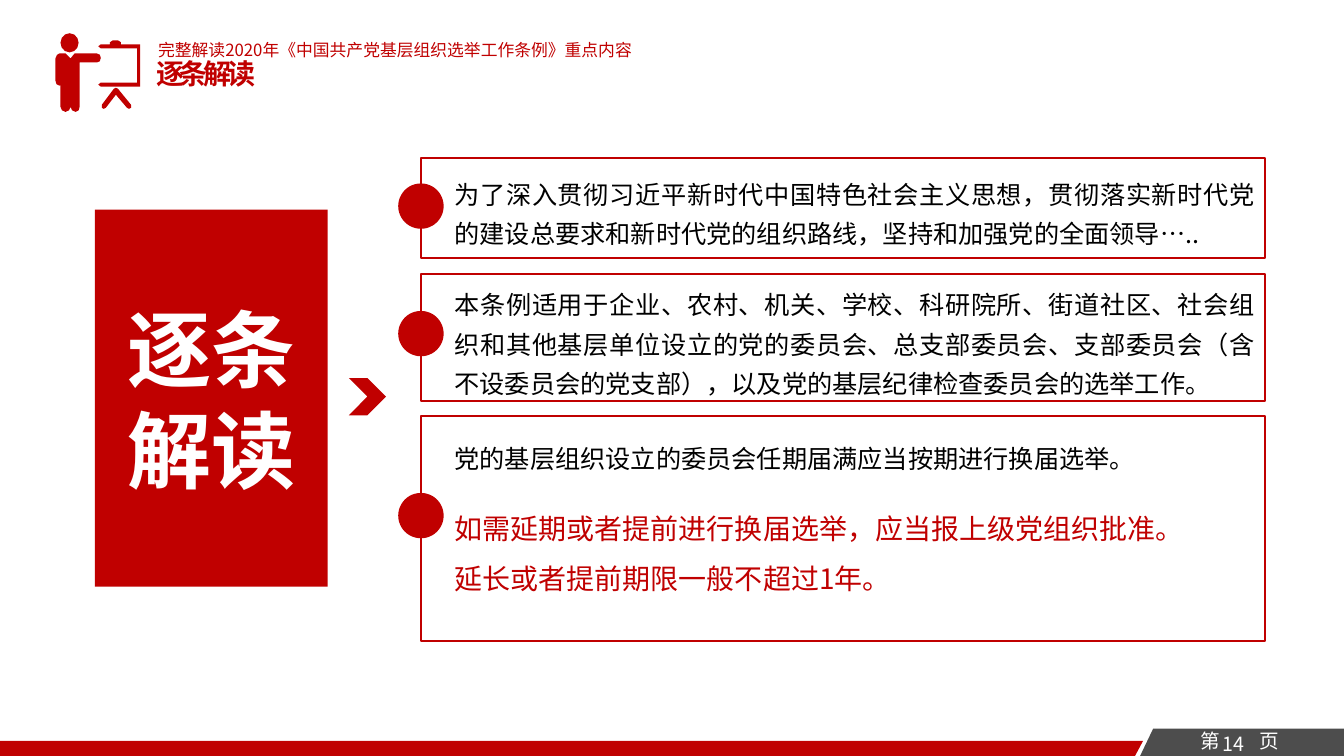
import lxml.etree
import pptx
import pptx.dml.color
import pptx.enum.shapes
import pptx.enum.text
import pptx.oxml.ns
import pptx.util

ALIGN = pptx.enum.text.PP_ALIGN
ANCHOR = pptx.enum.text.MSO_ANCHOR
SHAPE = pptx.enum.shapes.MSO_SHAPE
THEME = {
    "font": "Noto Sans CJK SC",
    "red": "C00000", "grey": "4D4D4D", "black": "000000", "white": "FFFFFF",
    "small": 12, "page": 14, "body": 18, "title": 20, "panel": 60,
    "frame": 1.5,
}

prs = pptx.Presentation()
prs.slide_width = pptx.util.Inches(13.333)
prs.slide_height = pptx.util.Inches(7.5)
s = prs.slides.add_slide(prs.slide_layouts[6])

# Lengths are hundredths of the slide's width and height: x, y, width, height.
COL, ROW = prs.slide_width / 100, prs.slide_height / 100
GRID = (COL, ROW, COL, ROW)


def paint(sp, fill=None, line=None):
    sp.shadow.inherit = False
    for part, color in ((sp.fill, fill), (sp.line.fill, line)):
        if color:
            part.solid()
            part.fore_color.rgb = pptx.dml.color.RGBColor.from_string(THEME[color])
        else:
            part.background()
    if line:
        sp.line.width = pptx.util.Pt(THEME["frame"])
    return sp


def write(text, at=None, sp=None, size="body", color="black", bold=False,
          align=ALIGN.LEFT, anchor=ANCHOR.TOP, leading=1.0, spacing=0, inset=True):
    """Put text into the shape sp, or into a new text box placed at `at`."""
    if sp is None:
        sp = s.shapes.add_textbox(*(int(n * u) for n, u in zip(at, GRID)))
    tf = sp.text_frame
    tf.word_wrap = True
    tf.vertical_anchor = anchor
    if not inset:
        tf.margin_left = tf.margin_right = tf.margin_top = tf.margin_bottom = 0
    for i, content in enumerate(text.split("\n")):
        p = tf.add_paragraph() if i else tf.paragraphs[0]
        p.alignment = align
        p.line_spacing = leading
        r = p.add_run()
        r.text = content
        r.font.name = THEME["font"]
        r.font.size = pptx.util.Pt(THEME[size])
        r.font.bold = bold
        r.font.color.rgb = pptx.dml.color.RGBColor.from_string(THEME[color])
        rpr = r.font._element
        east_asian = lxml.etree.SubElement(rpr, pptx.oxml.ns.qn("a:ea"))
        east_asian.set("typeface", THEME["font"])
        if spacing:
            rpr.set("spc", str(spacing * 100))


# Footer bars and the presenter icon; the icon has its own square grid
ICON = prs.slide_height / 750
footer_bar = [(0, 100), (84.45, 100), (85.05, 98), (0, 98)]
page_tab = [(85.8, 96.4), (84.83, 100), (100, 100), (100, 96.4)]
presenter = [
    (96, 53), (74, 53), (70, 58), (65, 53), (59, 53), (56.5, 54.5), (55, 58),
    (55, 80), (56, 83.5), (59, 85), (60, 84.5), (60, 106), (61.5, 109.5),
    (65, 111), (68.5, 109.5), (70, 106), (71.5, 109.5), (75, 111),
    (78, 109.5), (79, 106), (79, 62), (96, 62), (99, 60.8), (100, 57.5), (99, 54.3),
]
board = [
    (97.5, 46), (100, 44), (109, 44), (109, 42), (112, 40), (117, 40),
    (120, 42), (120, 44), (139, 44), (139, 86), (100, 86), (97.5, 84),
    (100, 82), (136, 82), (136, 48), (100, 48),
]
stand = [
    (130, 104), (117, 88), (115, 87), (113, 88), (101, 104), (101, 107),
    (103, 108), (105, 107), (115, 94), (126, 107), (128, 108), (130, 107),
]
for points, dx, dy, color in (
    (footer_bar, COL, ROW, "red"),
    (page_tab, COL, ROW, "grey"),
    (presenter, ICON, ICON, "red"),
    (board, ICON, ICON, "red"),
    (stand, ICON, ICON, "red"),
):
    corners = [(x * dx, y * dy) for x, y in points]
    outline = s.shapes.build_freeform(*corners[0])
    outline.add_line_segments(corners[1:], close=True)
    paint(outline.convert_to_shape(), fill=color)

# Page number
for text, x, y, width, inset in (
    ("第", 88.95, 96.4, 2.25, False),
    ("14", 85.28, 96.13, 12.98, True),
    ("页", 93.3, 96.4, 2.25, False),
):
    write(text, at=(x, y, width, 3.6), size="page", color="white",
          align=ALIGN.CENTER, inset=inset)

# Heading
write("逐条解读", at=(10.88, 6.8, 10.88, 5.87), size="title", color="red",
      bold=True, align=ALIGN.JUSTIFY, spacing=-3)
write("完整解读2020年《中国共产党基层组织选举工作条例》重点内容",
      at=(11.03, 2.93, 57.68, 7.33), size="small", color="red", anchor=ANCHOR.MIDDLE)

# Solid shapes: icon head, title panel, arrow
for kind, at, label in (
    (SHAPE.OVAL, (4.5, 4.4, 1.35, 2.53), ""),
    (SHAPE.RECTANGLE, (7.05, 27.73, 17.33, 49.87), "逐条解读"),
    (SHAPE.CHEVRON, (25.95, 50, 2.78, 4.93), ""),
):
    sp = s.shapes.add_shape(kind, *(int(n * u) for n, u in zip(at, GRID)))
    paint(sp, fill="red")
    if label:
        write(label, sp=sp, size="panel", color="white", bold=True,
              align=ALIGN.CENTER, anchor=ANCHOR.MIDDLE)

# Article frames, stacked with equal gaps: height, text offset, dot offset, text
articles = [
    (13.2, 0.93, 3.33,
     "为了深入贯彻习近平新时代中国特色社会主义思想，贯彻落实新时代党的建设总要求和新时代党的组织路线，"
     "坚持和加强党的全面领导….."),
    (16.8, 0.27, 4.93,
     "本条例适用于企业、农村、机关、学校、科研院所、街道社区、社会组织和其他基层单位设立的党的委员会、"
     "总支部委员会、支部委员会（含不设委员会的党支部），以及党的基层纪律检查委员会的选举工作。"),
    (29.73, 1.73, 10.13, "党的基层组织设立的委员会任期届满应当按期进行换届选举。"),
]
TEXT_LEFT, TEXT_WIDTH, GAP = 33.08, 61.05, 2.07
top = 20.93
for height, text_offset, dot_offset, text in articles:
    for kind, at, fill, line in (
        (SHAPE.RECTANGLE, (31.35, top, 62.78, height), None, "red"),
        (SHAPE.OVAL, (29.63, top + dot_offset, 3.38, 6), "red", None),
    ):
        sp = s.shapes.add_shape(kind, *(int(n * u) for n, u in zip(at, GRID)))
        paint(sp, fill, line)
    write(text, at=(TEXT_LEFT, top + text_offset, TEXT_WIDTH, height - text_offset),
          align=ALIGN.JUSTIFY, leading=1.3)
    top += height + GAP

write("如需延期或者提前进行换届选举，应当报上级党组织批准。\n延长或者提前期限一般不超过1年。",
      at=(TEXT_LEFT, 64.8, TEXT_WIDTH, 14.13), size="title", color="red", leading=1.5)

prs.save("out.pptx")
